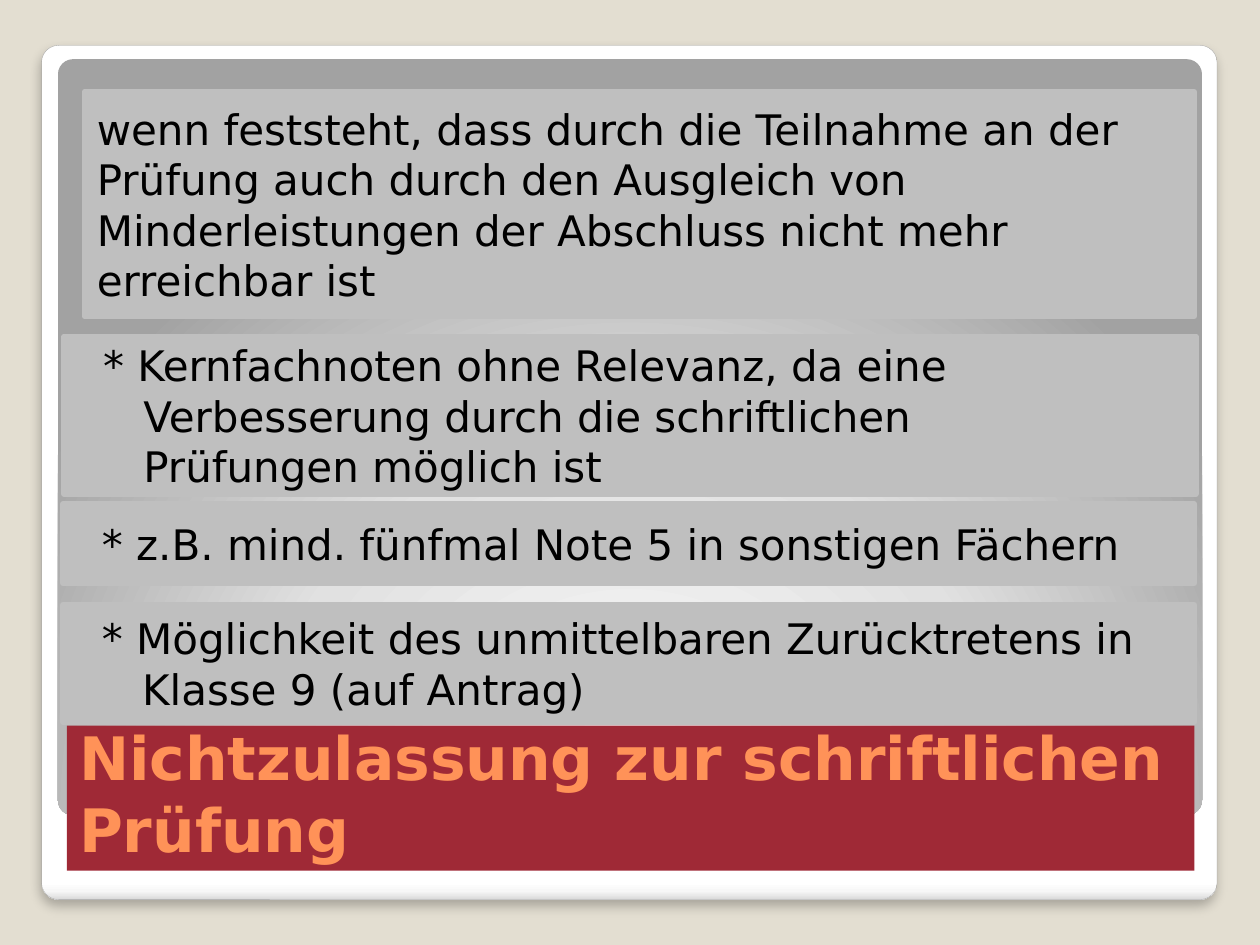
from dataclasses import dataclass

from lxml.etree import SubElement
from pptx import Presentation
from pptx.dml.color import RGBColor
from pptx.enum.shapes import MSO_SHAPE as Shape
from pptx.enum.text import MSO_ANCHOR as Anchor, PP_ALIGN as Align
from pptx.oxml import parse_xml
from pptx.oxml.ns import nsdecls, qn
from pptx.util import Inches, Pt

FONT = "DejaVu Sans"
COLORS = {
    "background": "E3DED1", "frame_edge": "A4A4A4", "box": "BFBFBF",
    "text": "000000", "banner": "9F2936", "heading": "FF9258", "shadow": "000000",
}


@dataclass
class Panel:
    left: float
    top: float
    width: float
    height: float
    stops: tuple[tuple[int, str], ...]
    direction: str


@dataclass
class Box:
    left: float
    top: float
    width: float
    height: float
    text: str
    margin: float = 0.53
    indent: float = -0.32
    size: float = 24
    bold: bool = False
    color: str = "text"
    fill: str = "box"
    outlined: bool = True
    anchor: Anchor = Anchor.MIDDLE


PANELS = [
    Panel(0.33, 0.36, 9.33, 6.78,
          ((0, "FFFFFF"), (98, "FFFFFF"), (99, "F7F7F7"), (100, "DADADA")),
          '<a:lin ang="5400000" scaled="0"/>'),
    Panel(0.46, 0.47, 9.08, 6, ((0, "FFFFFF"), (55, "E1E1E1"), (100, "A2A2A2")),
          '<a:path path="circle"><a:fillToRect l="50000" t="175000" r="50000" b="-75000"/></a:path>'),
]
BOXES = [
    Box(0.53, 5.76, 8.95, 1.15, "Nichtzulassung zur schriftlichen Prüfung", 0, 0, 34.2,
        True, "heading", "banner", False, Anchor.BOTTOM),
    Box(0.67, 0.73, 8.81, 1.78,
        "wenn feststeht, dass durch die Teilnahme an der Prüfung auch durch den Ausgleich "
        "von Minderleistungen der Abschluss nicht mehr erreichbar ist", 0, 0),
    Box(0.5, 4.8, 8.98, 0.93,
        "* Möglichkeit des unmittelbaren Zurücktretens in\vKlasse 9 (auf Antrag)"),
    Box(0.51, 2.67, 8.98, 1.25,
        "* Kernfachnoten ohne Relevanz, da eine\vVerbesserung durch die schriftlichen\v"
        "Prüfungen möglich ist"),
    Box(0.5, 4, 8.98, 0.63, "* z.B. mind. fünfmal Note 5 in sonstigen Fächern"),
]


def rgb(name: str) -> RGBColor:
    """Return a named colour."""
    return RGBColor.from_string(COLORS[name])


def add_block(slide, kind: Shape, block: Panel | Box):
    """Add a shape with the place of a block, without shadow or line."""
    shape = slide.shapes.add_shape(kind, Inches(block.left), Inches(block.top),
                                   Inches(block.width), Inches(block.height))
    shape.shadow.inherit = False
    shape.line.fill.background()
    return shape


def draw_panel(slide, panel: Panel):
    """Draw a rounded panel with a gradient."""
    shape = add_block(slide, Shape.ROUNDED_RECTANGLE, panel)
    shape.adjustments[0] = 0.02
    stops = "".join(f'<a:gs pos="{position * 1000}"><a:srgbClr val="{color}"/></a:gs>'
                    for position, color in panel.stops)
    shape._element.spPr.find(qn("a:prstGeom")).addnext(parse_xml(
        f'<a:gradFill {nsdecls("a")} rotWithShape="1"><a:gsLst>{stops}</a:gsLst>'
        f'{panel.direction}</a:gradFill>'))
    return shape


def draw_frame(slide, panel: Panel) -> None:
    """Draw the outer panel with its thin edge and soft shadow."""
    frame = draw_panel(slide, panel)
    frame.line.color.rgb = rgb("frame_edge")
    frame.line.width = Pt(0.16)
    effects = frame._element.spPr.find(qn("a:effectLst"))
    shadow = SubElement(effects, qn("a:outerShdw"), blurRad=str(Pt(6)), dist=str(Pt(4)),
                        dir="5400000", algn="t", rotWithShape="0")
    tint = SubElement(shadow, qn("a:srgbClr"), val=COLORS["shadow"])
    SubElement(tint, qn("a:alpha"), val="25000")


def draw_box(slide, box: Box) -> None:
    """Draw a filled box with one hanging paragraph."""
    shape = add_block(slide, Shape.RECTANGLE, box)
    shape.fill.solid()
    shape.fill.fore_color.rgb = rgb(box.fill)
    if box.outlined:
        shape.line.color.rgb = rgb(box.fill)
        shape.line.width = Pt(3.35)
    frame = shape.text_frame
    frame.word_wrap = True
    frame.vertical_anchor = box.anchor
    paragraph = frame.paragraphs[0]
    paragraph.text = box.text
    paragraph.alignment = Align.LEFT
    properties = paragraph._p.get_or_add_pPr()
    properties.set("marL", str(Inches(box.margin)))
    properties.set("indent", str(Inches(box.indent)))
    font = paragraph.font
    font.name, font.size, font.bold = FONT, Pt(box.size), box.bold
    font.color.rgb = rgb(box.color)


def main() -> None:
    """Build and save the slide."""
    deck = Presentation()
    deck.slide_width, deck.slide_height = Inches(10), Inches(7.5)
    slide = deck.slides.add_slide(deck.slide_layouts[6])
    slide.background.fill.solid()
    slide.background.fill.fore_color.rgb = rgb("background")
    outer, inner = PANELS
    draw_frame(slide, outer)
    draw_panel(slide, inner)
    for box in BOXES:
        draw_box(slide, box)
    deck.save("out.pptx")


if __name__ == "__main__":
    main()
